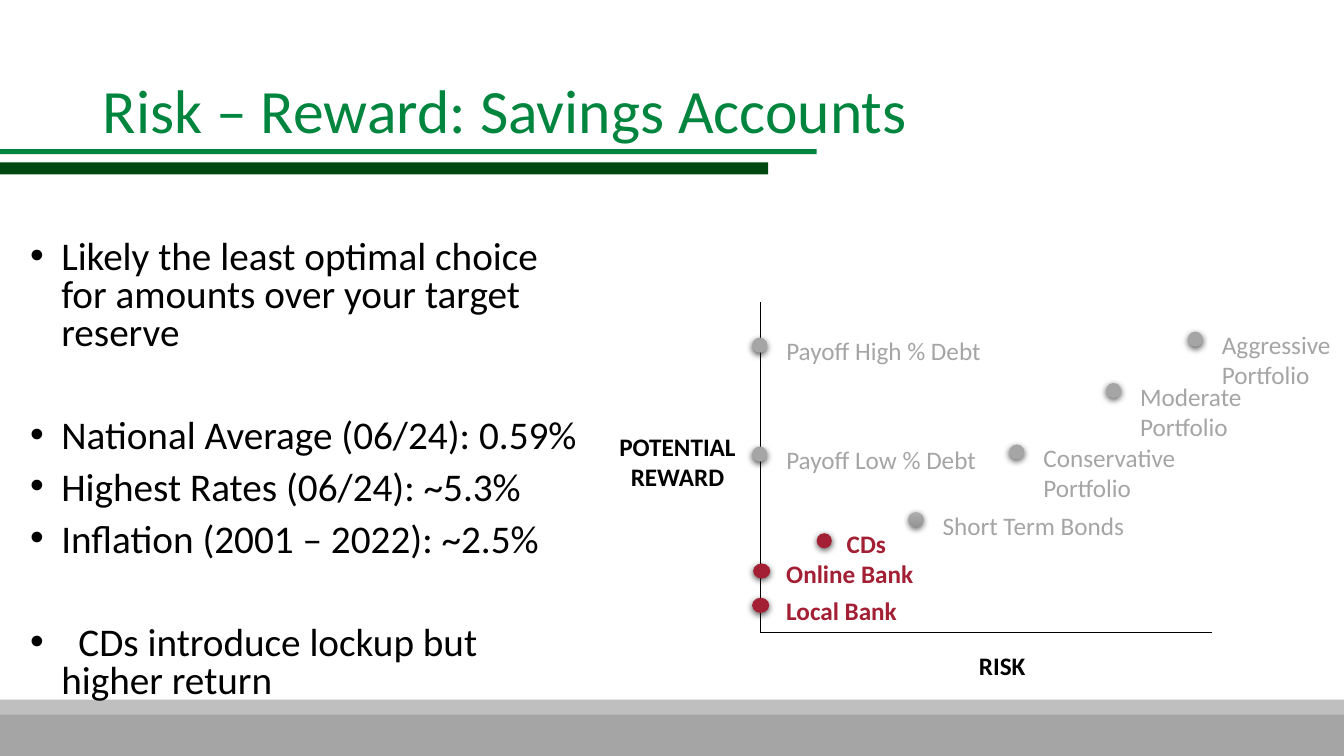
import pptx
import pptx.util
import pptx.dml.color
import pptx.enum.shapes
import pptx.enum.text
import pptx.oxml

PX = 9144  # one px is a hundredth of an inch
HUES = {"green": "00853E", "dark": "004812", "gray": "A5A5A5", "light": "BFBFBF",
        "red": "A31F34", "black": "000000", "pale": "AFAFAF", "dim": "939393"}
SHAPE = pptx.enum.shapes.MSO_SHAPE
ALIGN = pptx.enum.text.PP_ALIGN
FIT = pptx.enum.text.MSO_AUTO_SIZE
NS = 'xmlns:a="http://schemas.openxmlformats.org/drawingml/2006/main"'
SHADE = (f'<a:outerShdw {NS} blurRad="57150" dist="19050" dir="5400000" algn="ctr" '
         'rotWithShape="0"><a:srgbClr val="000000"><a:alpha val="63000"/>'
         '</a:srgbClr></a:outerShdw>')


def hue(name):
    return pptx.dml.color.RGBColor.from_string(HUES[name])


def scale(*sizes):
    return [pptx.util.Emu(size * PX) for size in sizes]


def put(thing, **looks):
    for key, value in looks.items():
        setattr(thing, key, value)


def write(para, text, size, color, bold=False):
    para.text = text
    for run in para.runs:
        put(run.font, name="Calibri", size=pptx.util.Pt(size), bold=bold)
        run.font.color.rgb = hue(color)


def add_form(slide, kind, box, color):
    form = slide.shapes.add_shape(kind, *scale(*box))
    form.shadow.inherit = False
    form.fill.solid()
    form.fill.fore_color.rgb = hue(color)
    form.line.fill.background()
    return form


def add_label(slide, box, text, color, bold=False, align=ALIGN.LEFT):
    frame = slide.shapes.add_textbox(*scale(*box)).text_frame
    put(frame, word_wrap=True, auto_size=FIT.SHAPE_TO_FIT_TEXT)
    para = frame.paragraphs[0]
    write(para, text, 18, color, bold)
    para.alignment = align


def add_bands(slide):
    for box, color in [((0, 700, 1333, 62), "gray"), ((0, 694, 1333, 15), "light"),
                       ((0, 148, 810, 5), "green"), ((-8, 161, 770, 12), "dark")]:
        add_form(slide, SHAPE.RECTANGLE, box, color)


def add_title(slide, box, text):
    title = slide.shapes.title
    left, top, width, height = scale(*box)
    put(title, left=left, top=top, width=width, height=height)
    put(title.text_frame, word_wrap=True, auto_size=FIT.NONE,
        vertical_anchor=pptx.enum.text.MSO_ANCHOR.MIDDLE)
    para = title.text_frame.paragraphs[0]
    write(para, text, 44, "green")
    put(para, alignment=ALIGN.LEFT, line_spacing=0.9)


def add_points(slide, box):
    frame = slide.shapes.add_textbox(*scale(*box)).text_frame
    put(frame, word_wrap=True, auto_size=FIT.NONE)
    # Text and space before; the wide gaps part the three groups
    points = [("Likely the least optimal choice for amounts over your target reserve", 0),
              ("National Average (06/24): 0.59%", 47),
              ("Highest Rates (06/24): ~5.3%", 10),
              ("Inflation (2001 – 2022): ~2.5%", 10),
              ("\tCDs introduce lockup but higher return", 47)]
    for rank, (text, gap) in enumerate(points):
        para = frame.add_paragraph() if rank else frame.paragraphs[0]
        write(para, text, 28, "black")
        props = para._p.get_or_add_pPr()
        props.set("marL", str(31 * PX))
        props.set("indent", str(-31 * PX))
        props.append(pptx.oxml.parse_xml(f'<a:buFont {NS} typeface="Arial"/>'))
        props.append(pptx.oxml.parse_xml(f'<a:buChar {NS} char="•"/>'))
        if text.startswith("\t"):
            props.append(pptx.oxml.parse_xml(
                f'<a:tabLst {NS}><a:tab pos="{48 * PX}" algn="l"/></a:tabLst>'))
        put(para, line_spacing=0.8, space_before=pptx.util.Pt(gap))


def add_axis(slide, *ends):
    line = slide.shapes.add_connector(
        pptx.enum.shapes.MSO_CONNECTOR.STRAIGHT, *scale(*ends))
    line.line.color.rgb = hue("black")
    line.line.width = pptx.util.Pt(0.5)
    line._element.spPr.append(pptx.oxml.parse_xml(f"<a:effectLst {NS}/>"))


def add_dot(slide, left, top, width, color):
    dot = add_form(slide, SHAPE.OVAL, (left, top, width, 15), color)
    dot._element.spPr.find(pptx.oxml.ns.qn("a:effectLst")).append(
        pptx.oxml.parse_xml(SHADE))
    return dot


def add_plot(slide, box):
    left, top, width, height = box
    base = top + height
    add_axis(slide, left, top, left, base)
    add_axis(slide, left, base, left + width, base)
    add_label(slide, (left - 155, top + 123, 146, 71), "POTENTIAL\vREWARD",
              "black", True, ALIGN.CENTER)
    add_label(slide, (left + 189, base + 13, 102, 40), "RISK",
              "black", True, ALIGN.CENTER)
    # Dot place and width, label shift and size, text, color
    marks = [(-8, 293, 17, 24, -7, 170, 40, "Local Bank", "red"),
             (-7, 259, 17, 23, -10, 154, 40, "Online Bank", "red"),
             (56, 229, 15, 20, -10, 146, 40, "CDs", "red"),
             (-8, 143, 15, 24, -7, 222, 40, "Payoff Low % Debt", "gray"),
             (-8, 35, 15, 24, -7, 222, 40, "Payoff High % Debt", "gray"),
             (147, 208, 15, 24, -7, 222, 40, "Short Term Bonds", "gray"),
             (247, 141, 15, 24, -7, 168, 71, "Conservative Portfolio", "gray"),
             (343, 80, 15, 24, -7, 156, 71, "Moderate Portfolio", "gray"),
             (424, 29, 15, 24, -7, 132, 71, "Aggressive Portfolio", "gray")]
    for x, y, size, right, down, wide, high, text, color in marks:
        dot = add_dot(slide, left + x, top + y, size, color)
        if text == "Short Term Bonds":
            dot.fill.gradient()
            dot.fill.gradient_angle = 270
            for stop, tint in zip(dot.fill.gradient_stops, ("pale", "dim")):
                stop.color.rgb = hue(tint)
        add_label(slide, (left + x + right, top + y + down, wide, high),
                  text, color, color == "red")


def main():
    deck = pptx.Presentation()
    deck.slide_width, deck.slide_height = scale(1333, 750)
    slide = deck.slides.add_slide(deck.slide_layouts[5])
    add_bands(slide)
    add_title(slide, (92, 40, 1150, 145), "Risk – Reward: Savings Accounts")
    add_points(slide, (20, 234, 565, 476))
    add_plot(slide, (754, 300, 448, 327))
    deck.save("out.pptx")


if __name__ == "__main__":
    main()
